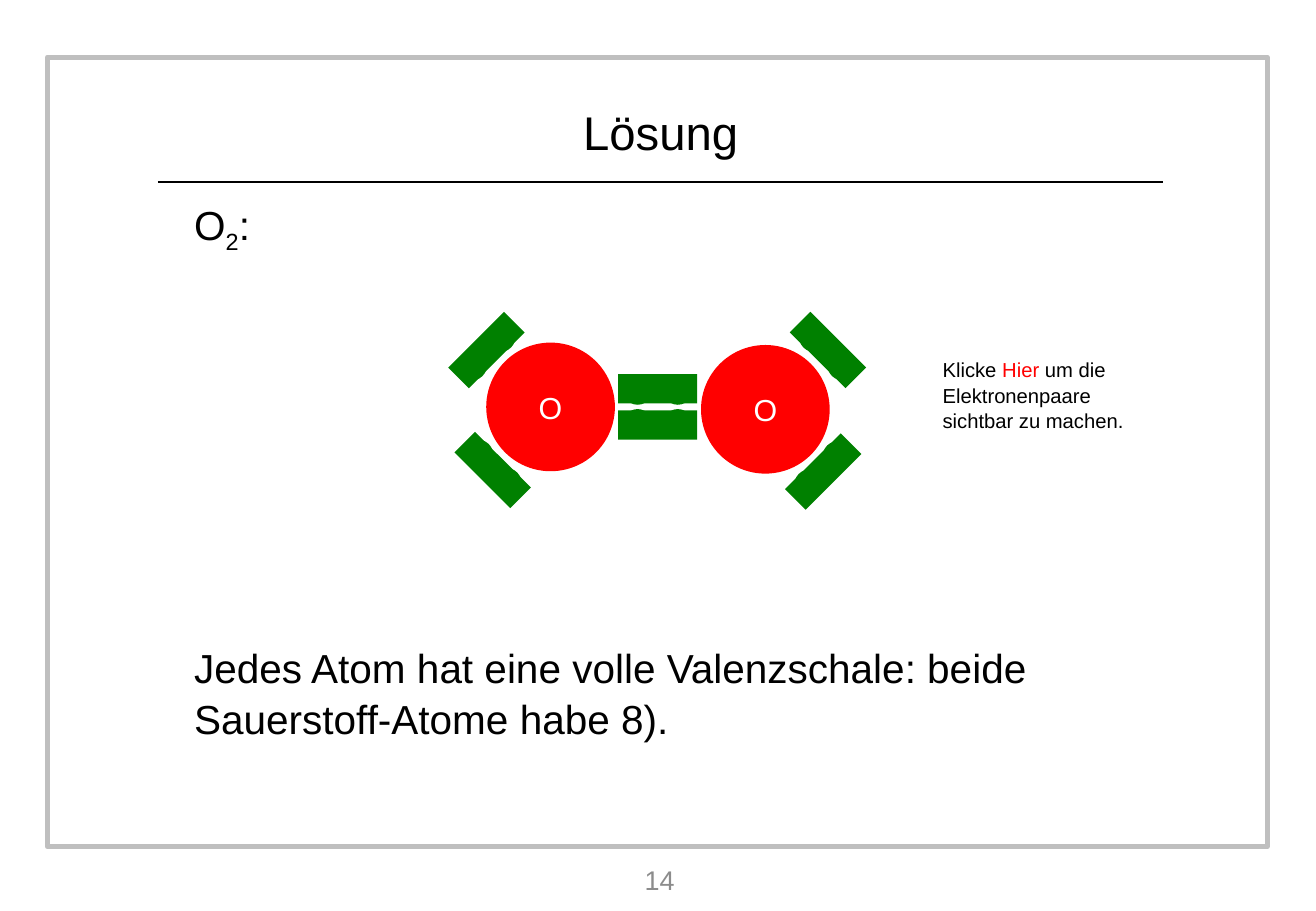
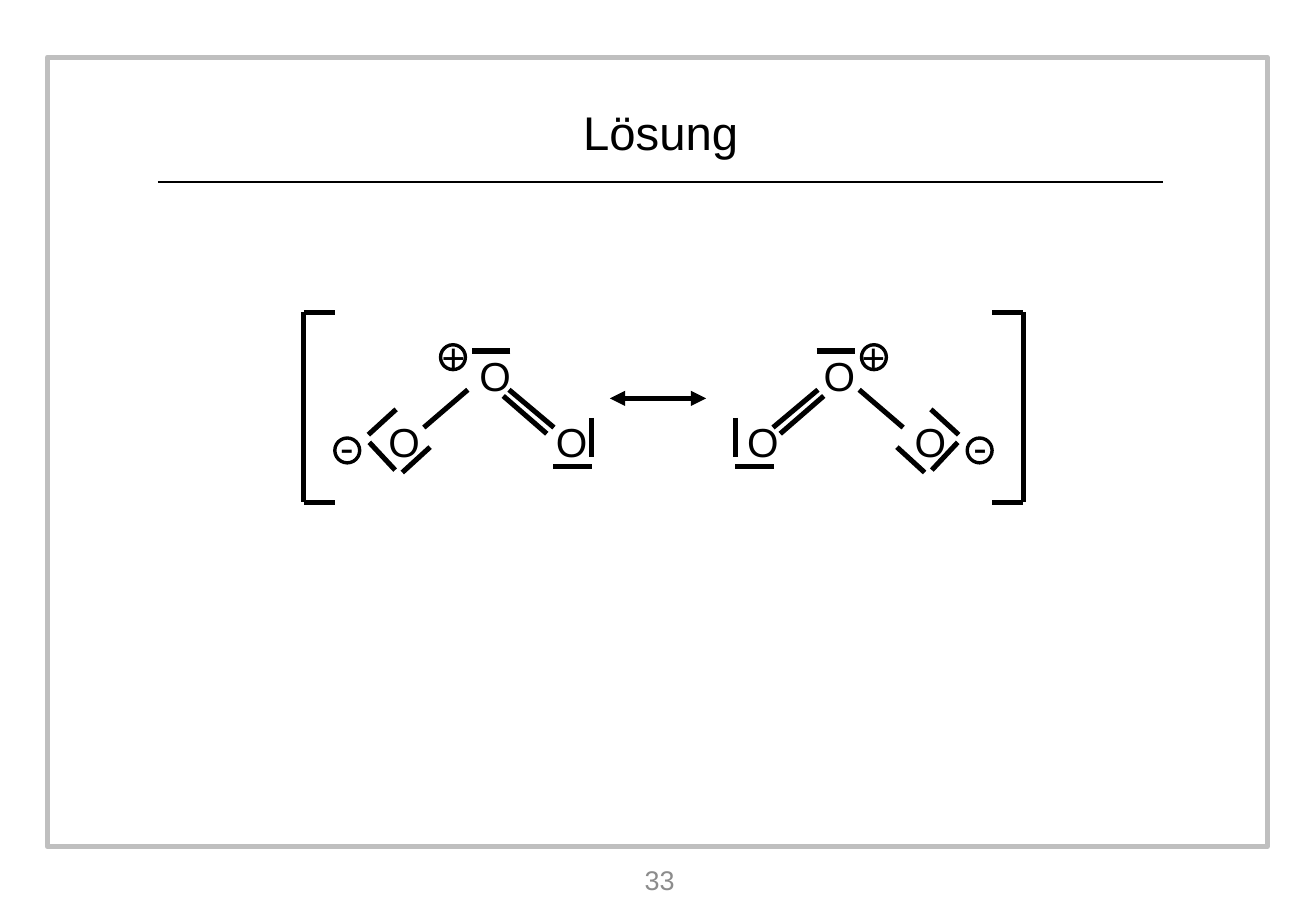
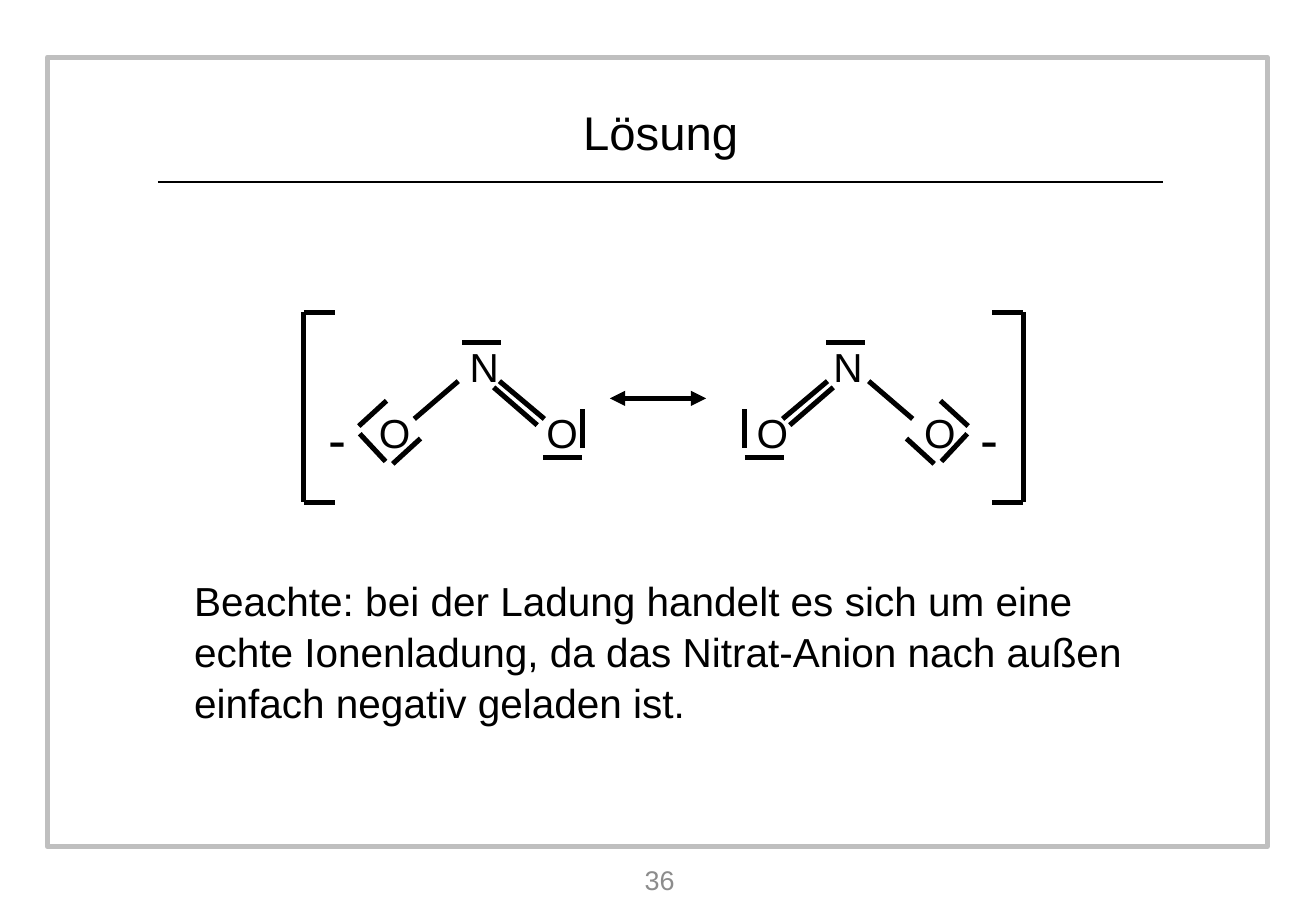
from math import cos, radians, sin

from pptx import Presentation
from pptx import util as u
from pptx.dml.color import RGBColor
from pptx.enum import shapes, text
from pptx.oxml.ns import qn
from lxml import etree

COLORS = {"ink": "000000", "frame": "BFBFBF", "page": "8C8C8C", "electron": "008000",
          "oxygen": "FF0000", "light": "FFFFFF"}
FONT = "Arial"
RECT, OVAL = shapes.MSO_SHAPE.RECTANGLE, shapes.MSO_SHAPE.OVAL
MIDDLE, TOP = text.MSO_ANCHOR.MIDDLE, text.MSO_ANCHOR.TOP
CENTER, LEFT = text.PP_ALIGN.CENTER, text.PP_ALIGN.LEFT


def block(slide, box, kind=None, fill=None, line=None, weight=0, runs=(), size=24,
          align=CENTER, anchor=MIDDLE, spacing=1.0, wrap=True, angle=0):
    """Add a shape, or a text box if no kind is given; box is centre x, centre y, width, height in cm.
    Each run is (words, colour, baseline shift in percent)."""
    x, y, w, h = box
    place = [u.Cm(v) for v in (x - w / 2, y - h / 2, w, h)]
    if kind is None:
        item = slide.shapes.add_textbox(*place)
    else:
        item = slide.shapes.add_shape(kind, *place)
        item.shadow.inherit = False
        item.rotation = angle
        for part, color in ((item.fill, fill), (item.line.fill, line)):
            if color:
                part.solid()
                part.fore_color.rgb = RGBColor.from_string(COLORS[color])
            else:
                part.background()
        if line:
            item.line.width = u.Pt(weight)
    if runs:
        frame = item.text_frame
        layout = {"word_wrap": wrap, "vertical_anchor": anchor,
                  "margin_top": u.Cm(0.13), "margin_bottom": u.Cm(0.13)}
        for name, value in layout.items():
            setattr(frame, name, value)
        paragraph = frame.paragraphs[0]
        paragraph.alignment = align
        paragraph.line_spacing = spacing
        for words, color, shift in runs:
            run = paragraph.add_run()
            run.text = words
            for name, value in {"name": FONT, "size": u.Pt(size)}.items():
                setattr(run.font, name, value)
            run.font.color.rgb = RGBColor.from_string(COLORS[color])
            if shift:
                run._r.get_or_add_rPr().set("baseline", str(shift * 1000))


def stroke(slide, x1, y1, x2, y2, weight=3, arrows=False):
    """Add a straight black line between two points in cm."""
    line = slide.shapes.add_connector(shapes.MSO_CONNECTOR.STRAIGHT,
                                      u.Cm(x1), u.Cm(y1), u.Cm(x2), u.Cm(y2))
    line.line.color.rgb = RGBColor.from_string(COLORS["ink"])
    line.line.width = u.Pt(weight)
    if arrows:
        for end in ("a:headEnd", "a:tailEnd"):
            etree.SubElement(line.line._get_or_add_ln(), qn(end), type="triangle")
    etree.SubElement(line._element.spPr, qn("a:effectLst"))


deck = Presentation()
deck.slide_width, deck.slide_height = u.Cm(27.51), u.Cm(19.05)

# Frame, title, rule and page number on every slide
pages = []
for number in ("14", "33", "36"):
    page = deck.slides.add_slide(deck.slide_layouts[6])
    block(page, (13.74, 9.45, 25.5, 16.51), RECT, line="frame", weight=3)
    stroke(page, 3.3, 3.81, 24.31, 3.81, weight=1.5)
    block(page, (13.81, 2.76, 3.78, 1.5), runs=[("Lösung", "ink", 0)], size=28, wrap=False)
    block(page, (13.79, 18.4, 6.2, 1), runs=[(number, "page", 0)], size=16)
    pages.append(page)
oxygen, ozone, nitrite = pages

# Body texts: slide, top, height, runs
bodies = [
    (oxygen, 3.99, 1.3, [("O", "ink", 0), ("2", "ink", -25), (":", "ink", 0)]),
    (oxygen, 13.27, 2.4, [("Jedes Atom hat eine volle Valenzschale: beide "
                           "Sauerstoff-Atome habe 8).", "ink", 0)]),
    (nitrite, 11.87, 3.4, [("Beachte: bei der Ladung handelt es sich um eine echte Ionenladung, "
                            "da das Nitrat-Anion nach außen einfach negativ geladen ist.",
                            "ink", 0)]),
]
for page, top, height, runs in bodies:
    block(page, (13.81, top + height / 2, 20, height), runs=runs,
          align=LEFT, anchor=TOP, spacing=1.05)

# Oxygen molecule: electrons, then the bars that join them to pairs, then the atoms
AXIS_Y, ELECTRON, SPREAD = 8.51, 0.61, 0.42
pairs = [(10.17, 7.32, -45), (10.3, 9.83, 45), (13.75, 8.13, 0),
         (13.75, 8.89, 0), (17.31, 7.32, 45), (17.21, 9.86, -45)]
for x, y, angle in pairs:
    inward = 0.03 if y < AXIS_Y else -0.03
    for side in (-SPREAD, SPREAD):
        block(oxygen, (x + side * cos(radians(angle)), y + inward + side * sin(radians(angle)),
                       ELECTRON, ELECTRON), OVAL, fill="electron")
for x, y, angle in pairs:
    block(oxygen, (x, y, 1.65, ELECTRON), RECT, fill="electron", angle=angle)
for x, y in ((11.51, 8.51), (16, 8.56)):
    block(oxygen, (x, y, 2.69, 2.69), OVAL, fill="oxygen", runs=[("O", "light", 0)], size=18)
block(oxygen, (21.78, 8.22, 4.65, 1.8), size=12, align=LEFT, anchor=TOP, spacing=1.05,
      runs=[("Klicke ", "ink", 0), ("Hier", "oxygen", 0),
            (" um die Elektronenpaare sichtbar zu machen.", "ink", 0)])

# Resonance structures: the left half is given, the right half is its mirror image
MIRROR = 27.74
bracket = [(6.35, 6.53, 6.35, 10.5), (6.35, 6.53, 7.01, 6.53), (6.35, 10.5, 7.01, 10.5)]
bonds = [
    (9.78, 8.15, 8.86, 8.94),                               # single bond
    (10.64, 8.15, 11.58, 8.94), (10.52, 8.28, 11.43, 9.07),  # double bond
    (12.37, 8.74, 12.37, 9.55), (12.37, 9.75, 11.56, 9.75),  # pairs of the right atom
    (10.67, 7.34, 9.86, 7.34),                              # pair of the central atom
    (7.72, 9.25, 8.26, 9.83), (8.99, 9.35, 8.41, 9.88), (8.28, 8.56, 7.7, 9.09),
]
minus, plus = (7.25, 9.34), (9.48, 7.45)
# slide, central atom, shift x, shift y, charges (sign, place, size), charge circles
structures = [
    (ozone, "O", 0, 0, [("+", plus, 24), ("-", minus, 24)], [(9.47, 7.47), (7.26, 9.42)]),
    (nitrite, "N", -0.2, -0.18, [("-", minus, 32)], []),
]
for page, central, dx, dy, charges, circles in structures:
    stroke(page, 12.75, 8.33, 14.76, 8.33, arrows=True)
    labels = [(central, (10.27, 7.84), 24), ("O", (8.37, 9.23), 24), ("O", (11.87, 9.23), 24)]
    for origin, sign in ((0, 1), (MIRROR, -1)):
        for x1, y1, x2, y2 in bracket:
            stroke(page, origin + sign * x1, y1, origin + sign * x2, y2)
        for x1, y1, x2, y2 in bonds:
            stroke(page, origin + sign * (x1 + dx), y1 + dy, origin + sign * (x2 + dx), y2 + dy)
        for words, (x, y), size in labels + charges:
            block(page, (origin + sign * (x + dx), y + dy, 1, 1.27),
                  runs=[(words, "ink", 0)], size=size)
        for x, y in circles:
            block(page, (origin + sign * x, y, 0.52, 0.52), OVAL, line="ink", weight=2)

deck.save("out.pptx")
